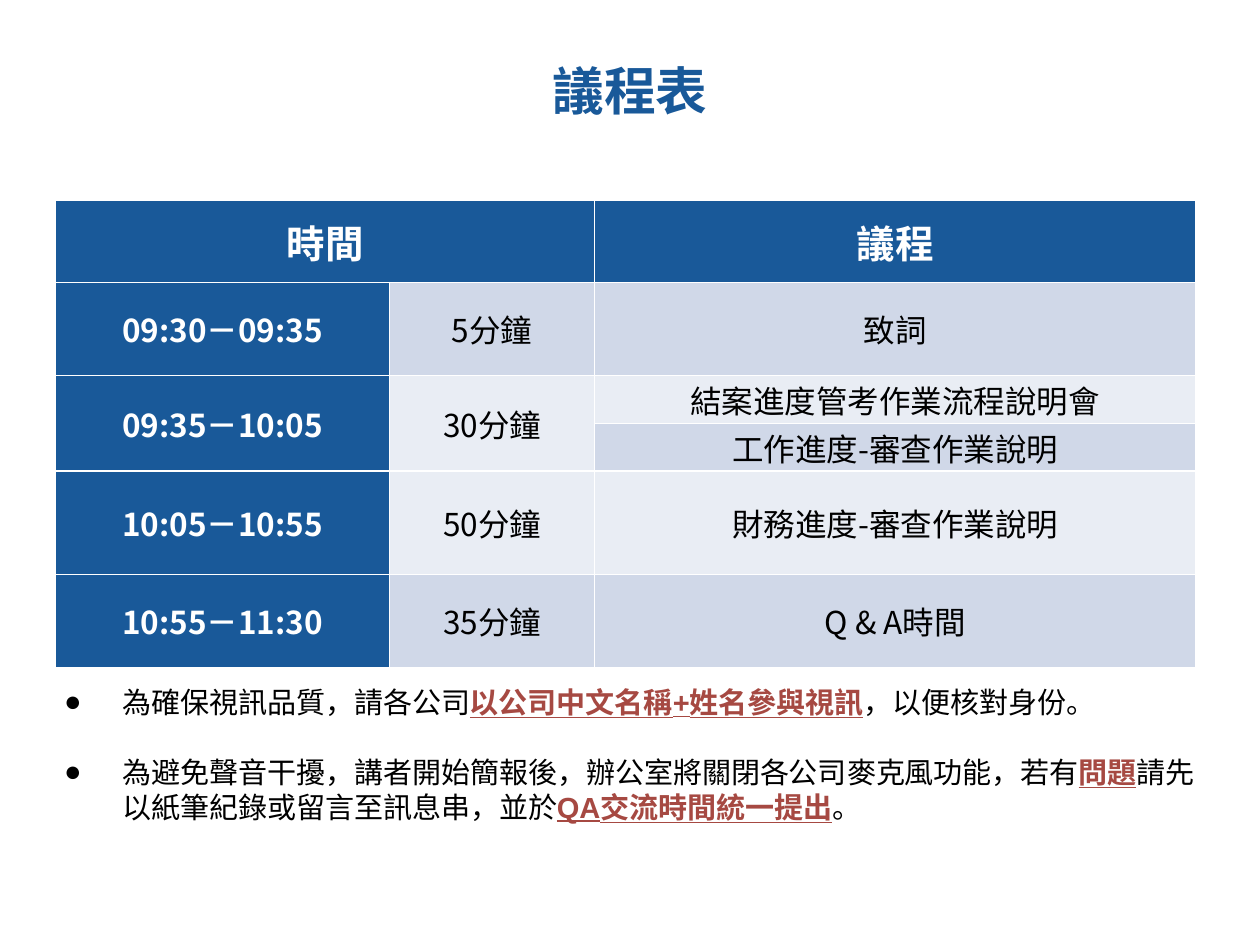
from lxml.etree import SubElement
from pptx import Presentation
from pptx.dml.color import RGBColor
from pptx.enum.text import MSO_ANCHOR, MSO_AUTO_SIZE, PP_ALIGN
from pptx.oxml.ns import qn
from pptx.util import Pt

PX = 9144
CJK = "Noto Sans CJK SC"
BLUE, RED, BLACK, WHITE = "195999", "A64942", "000000", "FFFFFF"
BAND, LIGHT = "D0D8E8", "E9EDF4"

COLS = [265, 163, 477]
ROWS = [65, 74, 38, 38, 82, 74]
AGENDA = [
    (1, "09:30－09:35", "5分鐘", ["致詞"], BAND),
    (2, "09:35－10:05", "30分鐘", ["結案進度管考作業流程說明會", "工作進度-審查作業說明"], LIGHT),
    (4, "10:05－10:55", "50分鐘", ["財務進度-審查作業說明"], LIGHT),
    (5, "10:55－11:30", "35分鐘", ["Q & A時間"], BAND),
]
NOTES = [
    [("為確保視訊品質，請各公司", False), ("以公司中文名稱+姓名參與視訊", True),
     ("，以便核對身份。", False)],
    [("為避免聲音干擾，講者開始簡報後，辦公室將關閉各公司麥克風功能，若有", False),
     ("問題", True), ("請先以紙筆紀錄或留言至訊息串，並於", False),
     ("QA交流時間統一提出", True), ("。", False)],
]


def px(n):
    return n * PX


def rgb(color):
    return RGBColor.from_string(color)


def add_text(p, text, size=18, color=BLACK, bold=False, underline=False, font="Arial"):
    r = p.add_run()
    r.text = text
    f = r.font
    f.size, f.bold, f.underline, f.name = Pt(size), bold, underline, font
    f.color.rgb = rgb(color)
    SubElement(r._r.get_or_add_rPr(), qn("a:ea"), typeface=CJK)


def place(s, x, y, w, h):
    s.left, s.top, s.width, s.height = px(x), px(y), px(w), px(h)
    s.text_frame.auto_size = MSO_AUTO_SIZE.NONE
    return s.text_frame


def add_title(s, x, y, w, h):
    tf = place(s, x, y, w, h)
    tf.margin_left = tf.margin_top = tf.margin_right = tf.margin_bottom = 0
    tf.vertical_anchor = MSO_ANCHOR.MIDDLE
    tf.word_wrap = False
    p = tf.paragraphs[0]
    p.alignment = PP_ALIGN.CENTER
    add_text(p, "議程表", size=29.5, color=BLUE, bold=True)


def fill_cell(cell, text, fill, **fmt):
    cell.fill.solid()
    cell.fill.fore_color.rgb = rgb(fill)
    cell.vertical_anchor = MSO_ANCHOR.MIDDLE
    cell.margin_left = cell.margin_right = px(7)
    cell.margin_top = cell.margin_bottom = 0
    p = cell.text_frame.paragraphs[0]
    p.alignment = PP_ALIGN.CENTER
    add_text(p, text, font=CJK, **fmt)


def add_agenda(sl, x, y):
    table = sl.shapes.add_table(len(ROWS), len(COLS), px(x), px(y),
                                px(sum(COLS)), px(sum(ROWS))).table
    for col, w in zip(table.columns, COLS):
        col.width = px(w)
    for row, h in zip(table.rows, ROWS):
        row.height = px(h)
    table.cell(0, 0).merge(table.cell(0, 1))
    for c, text in ((0, "時間"), (2, "議程")):
        fill_cell(table.cell(0, c), text, BLUE, size=22, color=WHITE, bold=True)
    for top, time, length, topics, fill in AGENDA:
        last = top + len(topics) - 1
        if last > top:
            for c in (0, 1):
                table.cell(top, c).merge(table.cell(last, c))
        fill_cell(table.cell(top, 0), time, BLUE, color=WHITE, bold=True)
        fill_cell(table.cell(top, 1), length, fill)
        for i, topic in enumerate(topics):
            fill_cell(table.cell(top + i, 2), topic, BAND if i else fill)


def add_notes(s, x, y, w, h):
    tf = place(s, x, y, w, h)
    tf.word_wrap = True
    for i, note in enumerate(NOTES):
        p = tf.add_paragraph() if i else tf.paragraphs[0]
        pPr = p._p.get_or_add_pPr()
        pPr.set("marL", str(px(46)))
        pPr.set("indent", str(px(-46)))
        SubElement(pPr, qn("a:buFont"), typeface="Arial")
        SubElement(pPr, qn("a:buChar"), char="●")
        p.space_before = Pt(20 if i else 0)
        for text, strong in note:
            add_text(p, text, size=16.6, color=RED if strong else BLACK,
                     bold=strong, underline=strong)


def main():
    prs = Presentation()
    prs.slide_width, prs.slide_height = px(1000), px(750)
    sl = prs.slides.add_slide(prs.slide_layouts[1])
    add_title(sl.shapes.title, 0, 29, 1000, 84)
    add_agenda(sl, 44, 159)
    add_notes(sl.placeholders[1], 41, 538, 919, 122)
    prs.save("out.pptx")


if __name__ == "__main__":
    main()
